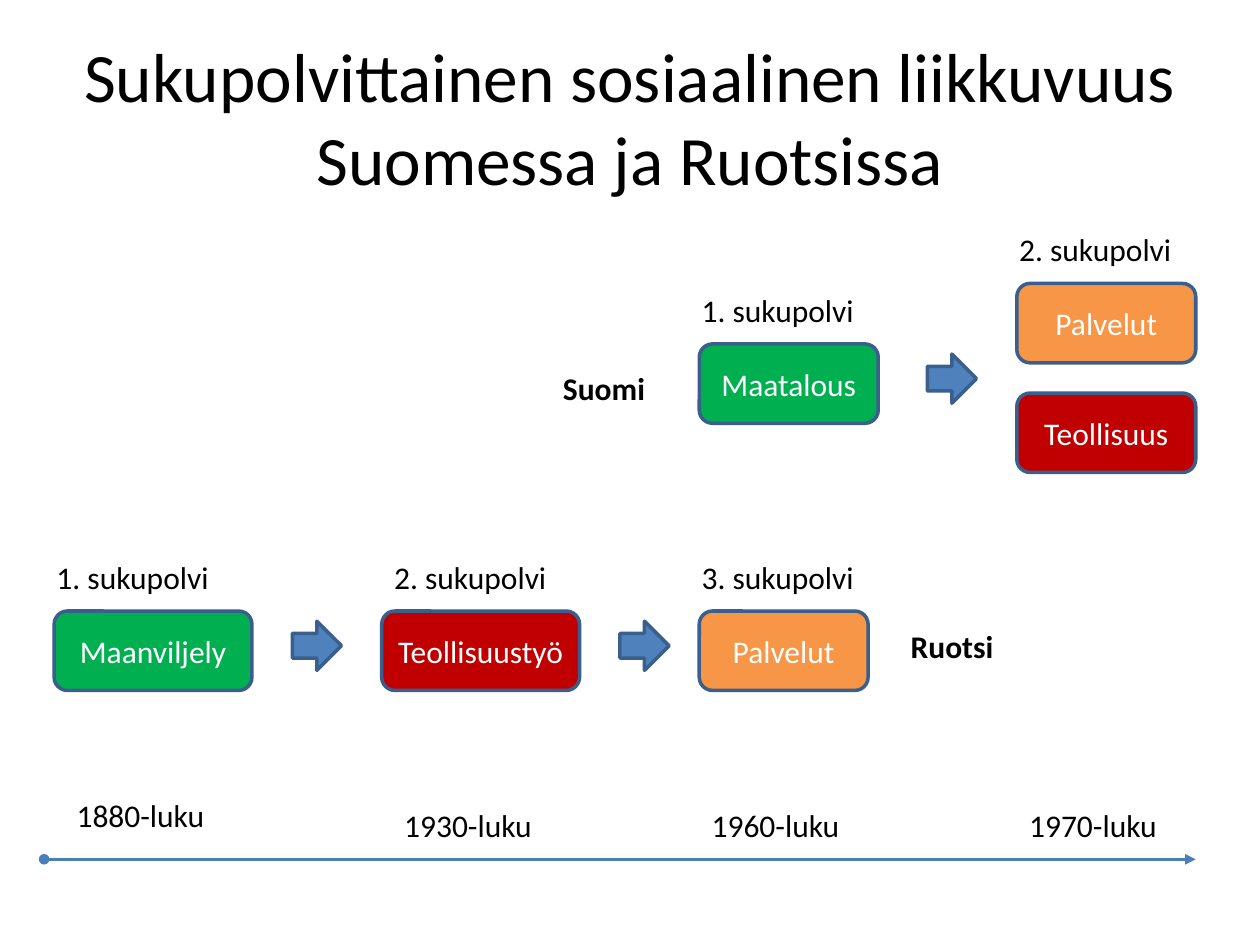
from lxml import etree
from pptx import Presentation
from pptx.dml.color import RGBColor
from pptx.enum import shapes, text
from pptx.oxml.ns import qn
from pptx.util import Inches, Pt

BLACK = RGBColor(0x00, 0x00, 0x00)
WHITE = RGBColor(0xFF, 0xFF, 0xFF)
GREEN = RGBColor(0x00, 0xB0, 0x50)
RED = RGBColor(0xC0, 0x00, 0x00)
ORANGE = RGBColor(0xF7, 0x96, 0x46)
BLUE = RGBColor(0x4F, 0x81, 0xBD)
OUTLINE = RGBColor(0x3A, 0x5F, 0x8C)
AXIS = RGBColor(0x4B, 0x7E, 0xBC)

FONT = "Calibri"
BOX_H = 0.63
LABEL_H = 0.4
LABEL_RISE = 0.47  # from the top of a box up to its generation label
ARROW = 0.39
FINLAND_Y, SWEDEN_Y, AXIS_Y = 2.73, 4.85, 6.82


def write(sp, words, color, size=18, bold=False, centred=False):
    tf = sp.text_frame
    tf.word_wrap = True
    tf.text = words
    p = tf.paragraphs[0]
    if centred:
        tf.vertical_anchor = text.MSO_ANCHOR.MIDDLE
        p.alignment = text.PP_ALIGN.CENTER
    font = p.runs[0].font
    font.name, font.size, font.bold = FONT, Pt(size), bold
    font.color.rgb = color


def add_text(s, words, x, y, w, h=LABEL_H, **style):
    sp = s.shapes.add_textbox(Inches(x), Inches(y), Inches(w), Inches(h))
    write(sp, words, BLACK, **style)


def add_filled(s, kind, x, y, w, h, color):
    sp = s.shapes.add_shape(kind, Inches(x), Inches(y), Inches(w), Inches(h))
    sp.shadow.inherit = False
    sp.fill.solid()
    sp.fill.fore_color.rgb = color
    sp.line.color.rgb = OUTLINE
    sp.line.width = Pt(2)
    return sp


def add_sector(s, words, x, y, w, color):
    sp = add_filled(s, shapes.MSO_SHAPE.ROUNDED_RECTANGLE, x, y, w, BOX_H, color)
    write(sp, words, WHITE, centred=True)


def add_generation(s, number, x, box_y):
    add_text(s, f"{number}. sukupolvi", x, box_y - LABEL_RISE, 1.57)


def add_arrow(s, x, y):
    add_filled(s, shapes.MSO_SHAPE.RIGHT_ARROW, x, y, ARROW, ARROW, BLUE)


def add_time_axis(s, x1, x2, y):
    line = s.shapes.add_connector(shapes.MSO_CONNECTOR.STRAIGHT,
                                  Inches(x1), Inches(y), Inches(x2), Inches(y))
    line.line.color.rgb = AXIS
    line.line.width = Pt(2)
    ln = line.line._get_or_add_ln()
    etree.SubElement(ln, qn("a:headEnd"), type="oval")
    etree.SubElement(ln, qn("a:tailEnd"), type="triangle")
    etree.SubElement(line._element.spPr, qn("a:effectLst"))


def main():
    prs = Presentation()
    prs.slide_width, prs.slide_height = Inches(10), Inches(7.5)
    s = prs.slides.add_slide(prs.slide_layouts[6])

    # Title
    add_text(s, "Sukupolvittainen sosiaalinen liikkuvuus Suomessa ja Ruotsissa",
             0.5, 0.3, 9, 1.25, size=39.6, centred=True)

    # Timeline
    add_time_axis(s, 0.35, 9.49, AXIS_Y)
    for decade, x, y in [(1880, 0.51, 6.27), (1930, 3.11, 6.35),
                         (1960, 5.55, 6.35), (1970, 8.07, 6.35)]:
        add_text(s, f"{decade}-luku", x, y, 1.26)

    # Finland: agriculture leads to two sectors at once
    add_text(s, "Suomi", 4.37, 2.88, 0.87, bold=True)
    for name, x, y, color in [("Maatalous", 5.55, FINLAND_Y, GREEN),
                              ("Palvelut", 8.07, 2.25, ORANGE),
                              ("Teollisuus", 8.07, 3.12, RED)]:
        add_sector(s, name, x, y, 1.42, color)
    add_generation(s, 1, 5.47, FINLAND_Y)
    add_generation(s, 2, 7.99, 2.25)
    add_arrow(s, 7.36, 2.81)

    # Sweden: one sector per generation
    add_text(s, "Ruotsi", 7.13, 4.93, 0.94, bold=True)
    sweden = [("Maanviljely", 0.43, 1.57, GREEN, 0.35),
              ("Teollisuustyö", 3.03, 1.57, RED, 3.03),
              ("Palvelut", 5.55, 1.34, ORANGE, 5.47)]
    for number, (name, x, w, color, label_x) in enumerate(sweden, 1):
        add_sector(s, name, x, SWEDEN_Y, w, color)
        add_generation(s, number, label_x, SWEDEN_Y)
    for x in (2.32, 4.92):
        add_arrow(s, x, 4.93)

    prs.save("out.pptx")


if __name__ == "__main__":
    main()
